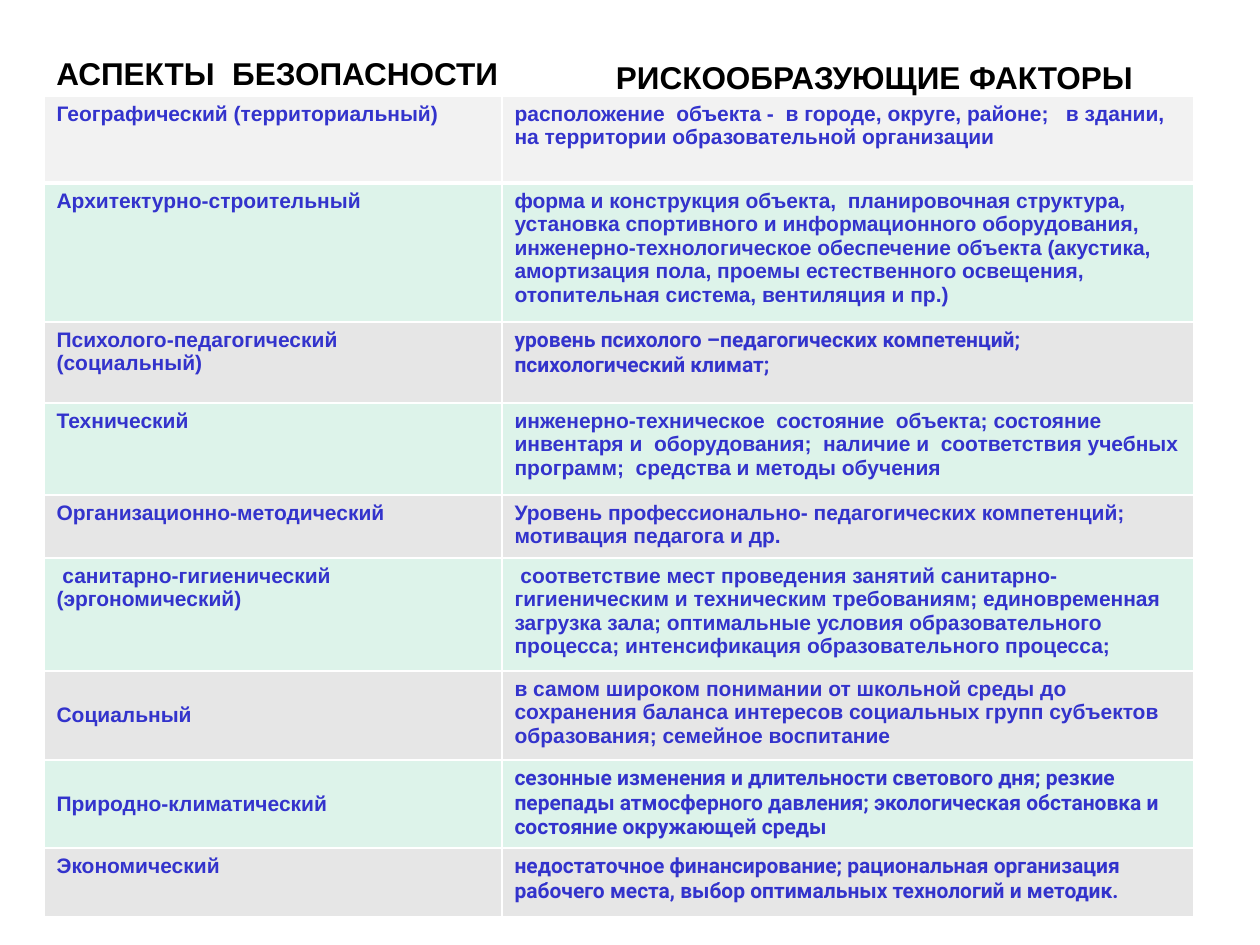
from lxml import etree
from pptx import Presentation
from pptx.dml.color import RGBColor
from pptx.enum.text import MSO_ANCHOR, PP_ALIGN
from pptx.oxml.ns import qn
from pptx.util import Emu, Pt

PX_PER_INCH = 126
BLACK = RGBColor(0x00, 0x00, 0x00)
BLUE = RGBColor(0x33, 0x33, 0xCC)
LIGHT_GREY = RGBColor(0xF2, 0xF2, 0xF2)
GREY = RGBColor(0xE6, 0xE6, 0xE6)
MINT = RGBColor(0xDD, 0xF3, 0xEA)
WHITE = RGBColor(0xFF, 0xFF, 0xFF)
LEFT, CENTER = PP_ALIGN.LEFT, PP_ALIGN.CENTER
TOP, MIDDLE = MSO_ANCHOR.TOP, MSO_ANCHOR.MIDDLE


def px(length):
    return Emu(round(length * 914400 / PX_PER_INCH))


def add_borders(cell, bottom_width):
    """Give the cell white borders; must run before its fill is set."""
    properties = cell._tc.get_or_add_tcPr()
    for side, width in (("L", 1), ("R", 1), ("T", 1), ("B", bottom_width)):
        line = etree.SubElement(properties, qn(f"a:ln{side}"), w=str(Pt(width)))
        fill = etree.SubElement(line, qn("a:solidFill"))
        etree.SubElement(fill, qn("a:srgbClr"), val=str(WHITE))


deck = Presentation()
deck.slide_width, deck.slide_height = px(1260), px(945)
page = deck.slides.add_slide(deck.slide_layouts[6])

# Risk table: height, aspect, its anchor, factors, their font
rows = [
    (87, "Географический (территориальный)", TOP,
     "расположение  объекта -  в городе, округе, районе;   в здании, "
     "на территории образовательной организации", "Arial"),
    (139, "Архитектурно-строительный", TOP,
     "форма и конструкция объекта,  планировочная структура, установка "
     "спортивного и информационного оборудования, инженерно-технологическое "
     "обеспечение объекта (акустика, амортизация пола, проемы естественного "
     "освещения, отопительная система, вентиляция и пр.)", "Arial"),
    (81, "Психолого-педагогический (социальный)", TOP,
     "уровень психолого –педагогических компетенций; "
     "психологический климат;", "Roboto"),
    (92, "Технический", TOP,
     "инженерно-техническое  состояние  объекта; состояние  инвентаря и  "
     "оборудования;  наличие и  соответствия учебных программ;  "
     "средства и методы обучения", "Arial"),
    (63, "Организационно-методический", TOP,
     "Уровень профессионально- педагогических компетенций; "
     "мотивация педагога и др.", "Arial"),
    (113, " санитарно-гигиенический (эргономический)", TOP,
     " соответствие мест проведения занятий санитарно-гигиеническим и "
     "техническим требованиям; единовременная загрузка зала; оптимальные "
     "условия образовательного процесса; интенсификация образовательного "
     "процесса;", "Arial"),
    (89, "Социальный", MIDDLE,
     "в самом широком понимании от школьной среды до  сохранения баланса "
     "интересов социальных групп субъектов образования; "
     "семейное воспитание", "Arial"),
    (88, "Природно-климатический", MIDDLE,
     "сезонные изменения и длительности светового дня; резкие перепады "
     "атмосферного давления; экологическая обстановка и состояние "
     "окружающей среды", "Roboto"),
    (69, "Экономический", TOP,
     "недостаточное финансирование; рациональная организация рабочего места, "
     "выбор оптимальных технологий и методик.", "Roboto"),
]
table_height = sum(row[0] for row in rows)
table = page.shapes.add_table(
    len(rows), 2, px(44), px(96), px(1150), px(table_height)).table
table.first_row = table.horz_banding = False
for column, width in zip(table.columns, (458, 692)):
    column.width = px(width)

for index, (height, aspect, anchor, factors, factor_font) in enumerate(rows):
    table.rows[index].height = px(height)
    if index == 0:
        color, bottom_width = LIGHT_GREY, 3
    else:
        color, bottom_width = (MINT if index % 2 else GREY), 1
    contents = ((aspect, "Arial", anchor), (factors, factor_font, TOP))
    for cell, (text, font, cell_anchor) in zip(table.rows[index].cells, contents):
        add_borders(cell, bottom_width)
        cell.fill.solid()
        cell.fill.fore_color.rgb = color
        cell.vertical_anchor = cell_anchor
        cell.text = text
        para = cell.text_frame.paragraphs[0]
        para.font.name, para.font.size, para.font.bold = font, Pt(12), True
        para.font.color.rgb = BLUE

# Column headings
headings = [
    ("АСПЕКТЫ  БЕЗОПАСНОСТИ", 44, 48, 472, LEFT),
    ("РИСКООБРАЗУЮЩИЕ ФАКТОРЫ", 600, 52, 549, CENTER),
]
for text, left, top, width, alignment in headings:
    box = page.shapes.add_textbox(px(left), px(top), px(width), px(50))
    box.text_frame.word_wrap = False
    para = box.text_frame.paragraphs[0]
    para.text = text
    para.alignment = alignment
    para.font.name, para.font.size, para.font.bold = "Arial", Pt(18), True
    para.font.color.rgb = BLACK

deck.save("out.pptx")
